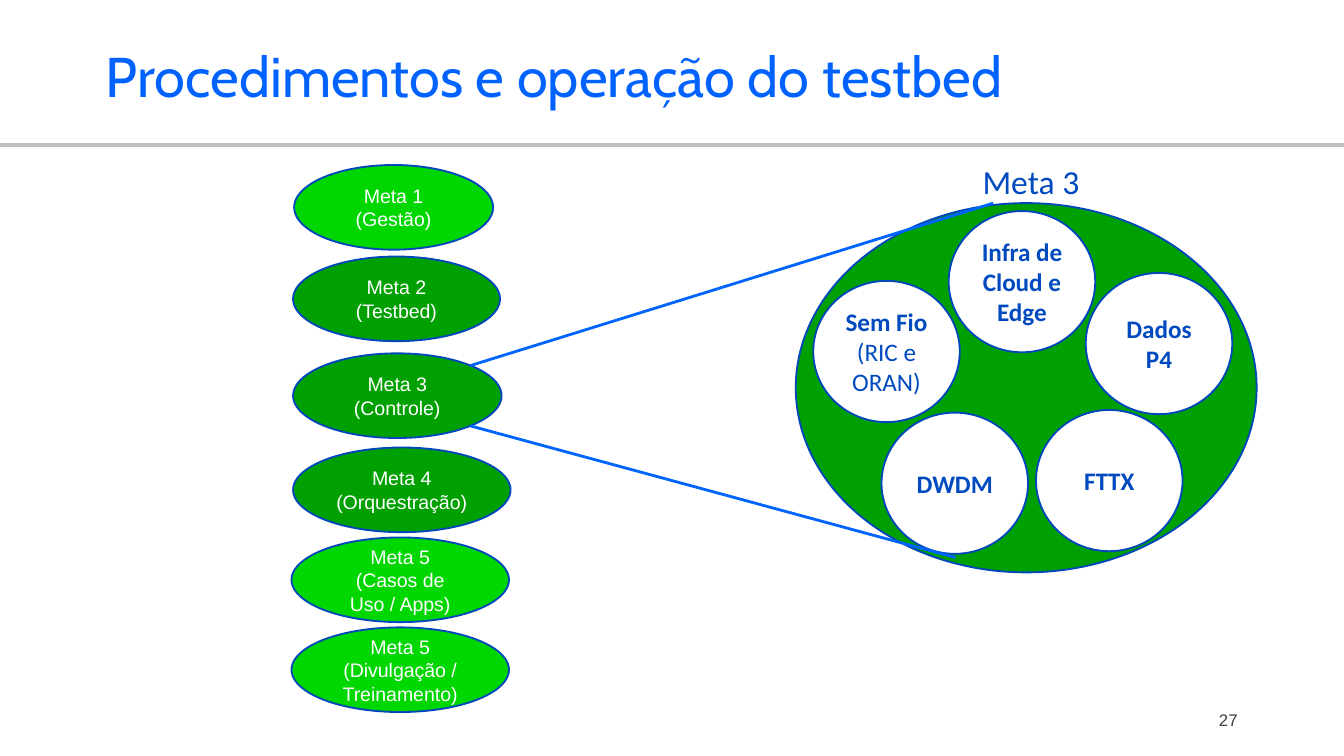
import pptx
import pptx.util
import pptx.dml.color
import pptx.enum.shapes
import pptx.enum.text
import pptx.oxml.ns
import lxml.etree

Cm = pptx.util.Cm
ALIGN = pptx.enum.text.PP_ALIGN
ANCHOR = pptx.enum.text.MSO_ANCHOR

# Content (lengths in cm)
TITLE = "Procedimentos e operação do testbed"
PAGE_NUMBER = "27"
DETAIL_LABEL = "Meta 3"

# Paragraphs, fill, left, top, width
GOALS = [
    (["Meta 1 (Gestão)"], "light_green", 5.56, 3.12, 3.76),
    (["Meta 2 (Testbed)"], "green", 5.54, 4.85, 3.91),
    (["Meta 3 (Controle)"], "green", 5.54, 6.68, 3.94),
    (["Meta 4 (Orquestração)"], "green", 5.54, 8.46, 4.11),
    (["Meta 5", "(Casos de Uso / Apps)"], "light_green", 5.51, 10.16, 4.11),
    (["Meta 5", "(Divulgação / Treinamento)"], "light_green", 5.51, 11.86, 4.11),
]
GOAL_HEIGHT = 1.6

# Bold paragraphs, plain paragraphs, left, top
AREAS = [
    (["Sem Fio"], ["(RIC e ORAN)"], 15.37, 5.31),
    (["Infra de Cloud e Edge"], [], 17.93, 3.99),
    (["Dados", "P4"], [], 20.52, 5.16),
    (["DWDM"], [], 16.66, 7.8),
    (["FTTX"], [], 19.58, 7.75),
]
AREA_SIZE = (2.77, 2.67)
DETAIL_BOX = (15.04, 3.84, 8.71, 6.98)
ZOOM_LINES = [(8.89, 6.91, 18.77, 3.84), (8.89, 8.05, 18.06, 10.54)]

THEME = {
    "colors": {
        "title": "0062FF", "rule": "BFBFBF", "number": "3F3F3F",
        "green": "00A000", "light_green": "00D600", "white": "FFFFFF",
        "outline": "0048BA", "text": "004ABF", "zoom": "0064FF",
    },
    # Font, size, color
    "title": ("Cabin", 30, "title"),
    "number": ("Arial", 9, "number"),
    "goal": ("Arial", 10.5, "white"),
    "area": ("Calibri", 13.5, "text"),
    "label": ("Calibri", 18, "text"),
}


def color(name):
    return pptx.dml.color.RGBColor.from_string(THEME["colors"][name])


def write(shape, lines, style, align, anchor, inset=(0.18, 0.1), bold_count=0):
    """Fill a shape with paragraphs; the first bold_count are bold."""
    font_name, size, font_color = THEME[style]
    frame = shape.text_frame
    frame.text = "\n".join(lines)
    frame.word_wrap = True
    frame.vertical_anchor = anchor
    frame.margin_left = frame.margin_right = Cm(inset[0])
    frame.margin_top = frame.margin_bottom = Cm(inset[1])
    for index, para in enumerate(frame.paragraphs):
        para.alignment = align
        for span in para.runs:
            span.font.name = font_name
            span.font.size = pptx.util.Pt(size)
            span.font.bold = index < bold_count
            span.font.color.rgb = color(font_color)


def add_ellipse(page, box, fill):
    shape = page.shapes.add_shape(
        pptx.enum.shapes.MSO_SHAPE.OVAL, *map(Cm, box))
    shape.shadow.inherit = False
    shape.fill.solid()
    shape.fill.fore_color.rgb = color(fill)
    shape.line.color.rgb = color("outline")
    shape.line.width = pptx.util.Pt(1)
    return shape


def add_line(page, ends, line_color, width):
    line = page.shapes.add_connector(
        pptx.enum.shapes.MSO_CONNECTOR.STRAIGHT, *map(Cm, ends))
    line.line.color.rgb = color(line_color)
    line.line.width = pptx.util.Pt(width)
    lxml.etree.SubElement(
        line._element.spPr, pptx.oxml.ns.qn("a:effectLst"))


def main():
    deck = pptx.Presentation()
    deck.slide_width, deck.slide_height = Cm(25.4), Cm(14.29)
    page = deck.slides.add_slide(deck.slide_layouts[5])

    # Heading, rule and page number
    title = page.shapes.title
    title.left, title.top, title.width, title.height = map(
        Cm, (1.75, 0.28, 20.6, 2.44))
    write(title, [TITLE], "title", ALIGN.LEFT, ANCHOR.MIDDLE, (0.25, 0.13))
    title.text_frame.paragraphs[0].line_spacing = 0.9
    add_line(page, (0, 2.74, 25.4, 2.74), "rule", 2.25)
    number = page.shapes.add_textbox(*map(Cm, (17.93, 13.23, 5.71, 0.76)))
    write(number, [PAGE_NUMBER], "number", ALIGN.RIGHT, ANCHOR.MIDDLE,
          (0.25, 0.13))

    # Technology areas inside the enlarged goal
    add_ellipse(page, DETAIL_BOX, "green")
    for strong, plain, left, top in AREAS:
        area = add_ellipse(page, (left, top, *AREA_SIZE), "white")
        write(area, strong + plain, "area", ALIGN.CENTER, ANCHOR.MIDDLE,
              bold_count=len(strong))

    # Column of goals
    for lines, fill, left, top, width in GOALS:
        goal = add_ellipse(page, (left, top, width, GOAL_HEIGHT), fill)
        write(goal, lines, "goal", ALIGN.CENTER, ANCHOR.MIDDLE)

    # Zoom lines and label
    for ends in ZOOM_LINES:
        add_line(page, ends, "zoom", 1.5)
    label = page.shapes.add_textbox(*map(Cm, (18.39, 2.95, 2.24, 0.97)))
    write(label, [DETAIL_LABEL], "label", ALIGN.LEFT, ANCHOR.TOP)

    deck.save("out.pptx")


if __name__ == "__main__":
    main()
